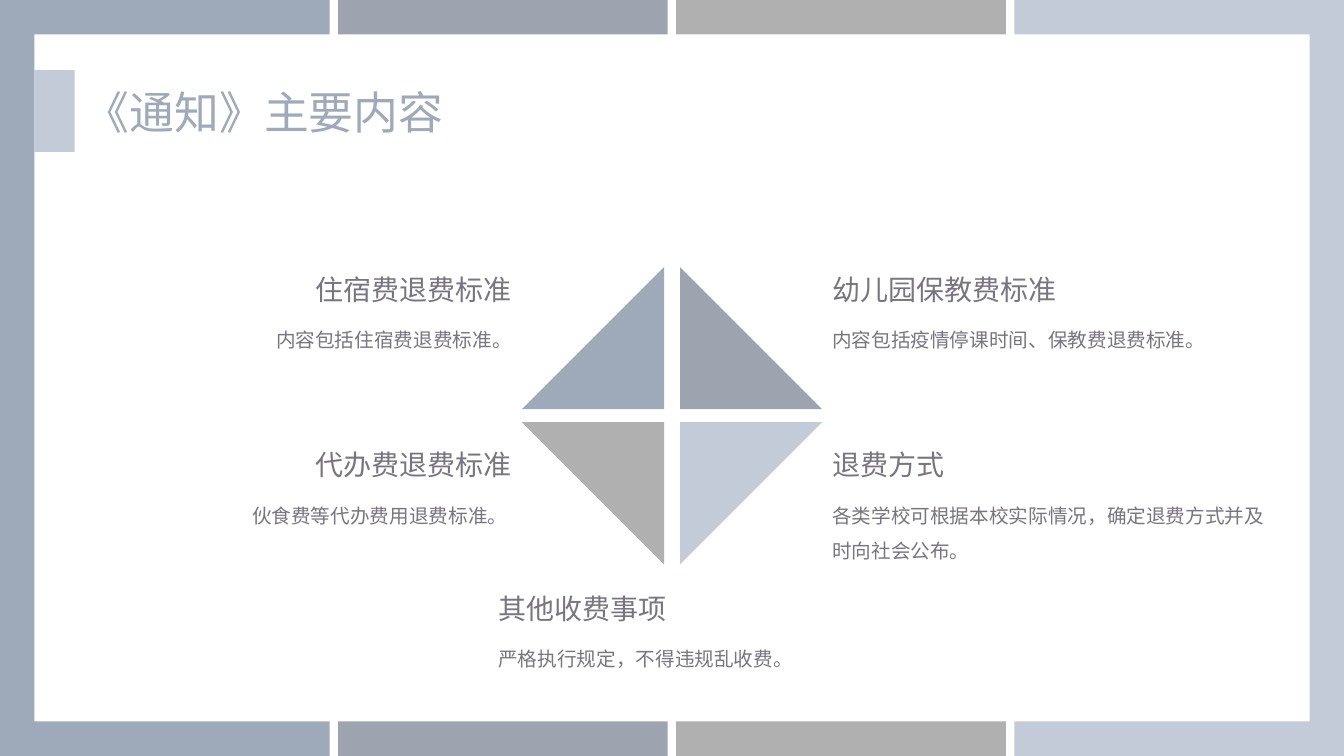
from dataclasses import dataclass

from lxml import etree
from pptx import Presentation
from pptx.dml.color import RGBColor
from pptx.enum.shapes import MSO_SHAPE
from pptx.enum.text import MSO_ANCHOR, MSO_AUTO_SIZE, PP_ALIGN
from pptx.oxml.ns import qn
from pptx.util import Pt

RECTANGLE, TRIANGLE = MSO_SHAPE.RECTANGLE, MSO_SHAPE.RIGHT_TRIANGLE
LEFT, RIGHT = PP_ALIGN.LEFT, PP_ALIGN.RIGHT
MIDDLE = MSO_ANCHOR.MIDDLE
NO_AUTOFIT = MSO_AUTO_SIZE.NONE

FONT = "Noto Sans CJK SC"
COLOURS = {
    "blue": "9EA9BA",
    "slate": "9EA4AF",
    "grey": "B0B0B0",
    "pale": "C3CAD8",
    "white": "FFFFFF",
    "text": "787481",
}
PAGE_WIDTH, PAGE_HEIGHT = 960, 540
BAR_WIDTH, BAR_STEP = 235.5, 241.5
MARGIN = 24.6
TRIANGLE_SIZE = 101.5
TOPIC_WIDTH, HEADING_HEIGHT, LINE_HEIGHT = 330.5, 31.7, 25.2


@dataclass
class Triangle:
    left: float
    top: float
    rotation: int
    colour: str


@dataclass
class Topic:
    left: float
    top: float
    heading: str
    body: str
    align: PP_ALIGN = LEFT
    lines: int = 1


TRIANGLES = [
    Triangle(485.8, 190.8, 0, "slate"),
    Triangle(485.8, 301.6, 90, "pale"),
    Triangle(372.8, 190.8, 270, "blue"),
    Triangle(372.8, 301.6, 180, "grey"),
]
TOPICS = [
    Topic(587.3, 190.8, "幼儿园保教费标准", "内容包括疫情停课时间、保教费退费标准。"),
    Topic(587.3, 316.1, "退费方式",
          "各类学校可根据本校实际情况，确定退费方式并及时向社会公布。", lines=2),
    Topic(42.3, 190.8, "住宿费退费标准", "内容包括住宿费退费标准。", RIGHT),
    Topic(42.3, 316.1, "代办费退费标准", "伙食费等代办费用退费标准。 ", RIGHT),
    Topic(348.9, 418.3, "其他收费事项", "严格执行规定，不得违规乱收费。"),
]


def add_block(page, kind, left: float, top: float, width: float, height: float,
              colour: str, rotation: int = 0) -> None:
    block = page.shapes.add_shape(kind, Pt(left), Pt(top), Pt(width), Pt(height))
    block.shadow.inherit = False
    block.fill.solid()
    block.fill.fore_color.rgb = RGBColor.from_string(COLOURS[colour])
    block.line.fill.background()
    block.rotation = rotation


def write_text(box, text: str, *, size: float, colour: str = "text",
               align: PP_ALIGN = LEFT, spacing: float = 1.0) -> None:
    frame = box.text_frame
    frame.word_wrap = True
    frame.auto_size = NO_AUTOFIT
    frame.vertical_anchor = MIDDLE
    para = frame.paragraphs[0]
    para.alignment = align
    para.line_spacing = spacing
    span = para.add_run()
    span.text = text
    span.font.size = Pt(size)
    span.font.name = FONT
    span.font.color.rgb = RGBColor.from_string(COLOURS[colour])
    # Chinese glyphs take the East Asian typeface
    east_asian = etree.SubElement(span.font._element, qn("a:ea"))
    east_asian.set("typeface", FONT)


def add_topic(page, topic: Topic) -> None:
    heading = page.shapes.add_textbox(
        Pt(topic.left), Pt(topic.top), Pt(TOPIC_WIDTH), Pt(HEADING_HEIGHT))
    write_text(heading, topic.heading, size=20, align=topic.align)
    body = page.shapes.add_textbox(
        Pt(topic.left), Pt(topic.top + HEADING_HEIGHT),
        Pt(TOPIC_WIDTH), Pt(7.2 + LINE_HEIGHT * topic.lines))
    write_text(body, topic.body, size=14, align=topic.align, spacing=1.5)


def add_title(page, text: str) -> None:
    title = page.shapes.title
    title.left, title.top, title.width, title.height = (
        Pt(53.4), Pt(56.4), Pt(TOPIC_WIDTH), Pt(46))
    write_text(title, text, size=32, colour="blue")
    # Bring the title in front of the frame
    page.shapes._spTree.append(title._element)


def main() -> None:
    deck = Presentation()
    deck.slide_width, deck.slide_height = Pt(PAGE_WIDTH), Pt(PAGE_HEIGHT)
    page = deck.slides.add_slide(deck.slide_layouts[5])

    # Coloured frame with a white panel
    for index, colour in enumerate(("blue", "slate", "grey", "pale")):
        add_block(page, RECTANGLE, index * BAR_STEP, 0, BAR_WIDTH, PAGE_HEIGHT, colour)
    add_block(page, RECTANGLE, MARGIN, MARGIN, PAGE_WIDTH - 2 * MARGIN,
              PAGE_HEIGHT - 2 * MARGIN, "white")

    # Title with its marker
    add_block(page, RECTANGLE, MARGIN, 50.2, 28.8, 58.4, "pale")
    add_title(page, "《通知》主要内容")

    # Diamond of four triangles
    for part in TRIANGLES:
        add_block(page, TRIANGLE, part.left, part.top, TRIANGLE_SIZE, TRIANGLE_SIZE,
                  part.colour, part.rotation)

    # Topics around the diamond
    for topic in TOPICS:
        add_topic(page, topic)

    deck.save("out.pptx")


if __name__ == "__main__":
    main()
